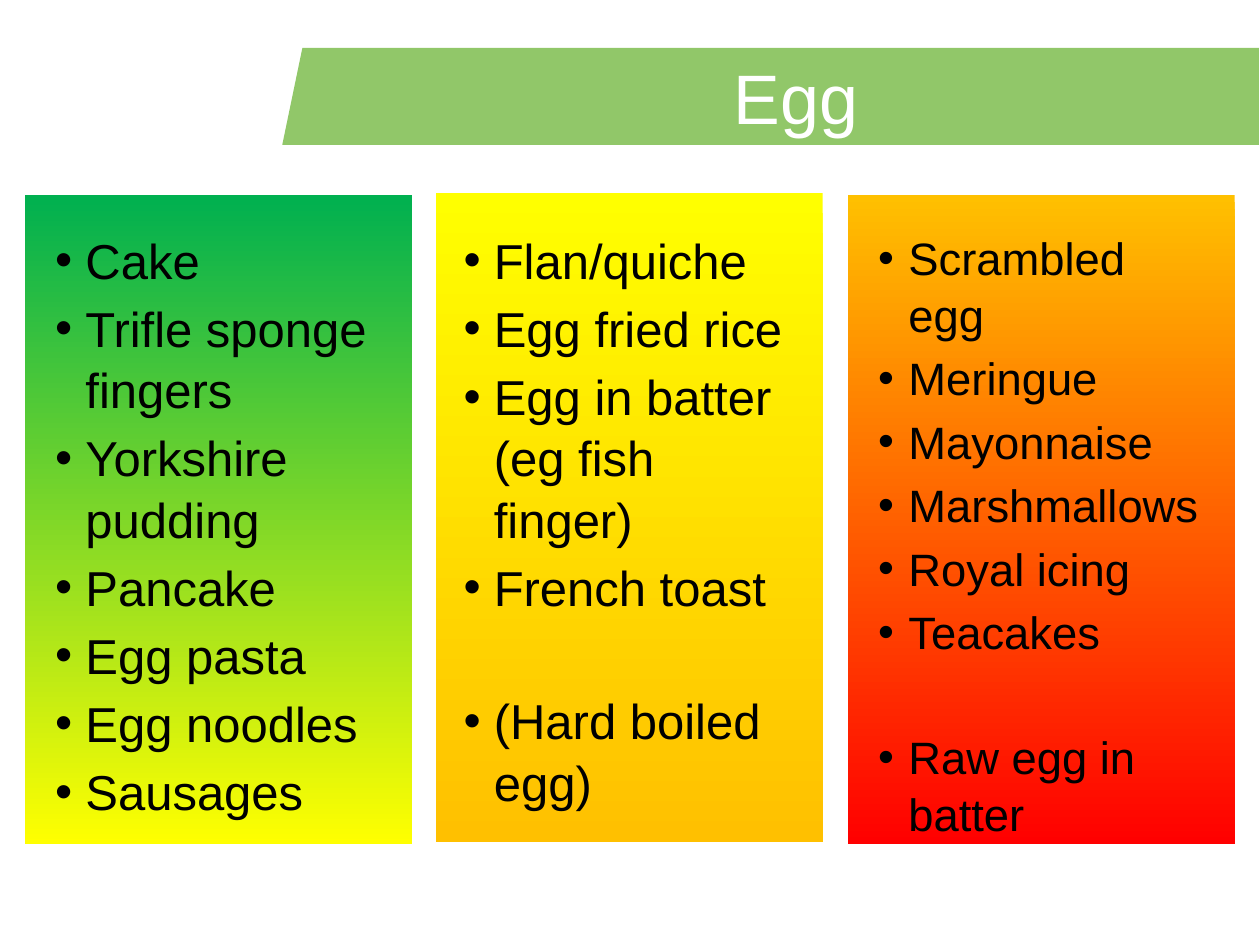
from pptx import Presentation
from pptx.dml.color import RGBColor
from pptx.enum.shapes import MSO_SHAPE
from pptx.enum.text import MSO_ANCHOR, PP_ALIGN
from pptx.oxml.ns import qn
from pptx.util import Inches, Pt
from lxml import etree

RECT = MSO_SHAPE.RECTANGLE
MIDDLE = MSO_ANCHOR.MIDDLE
CENTER = PP_ALIGN.CENTER
FONT = "Arial"
INDENT = Inches(0.24)
GAP = 4
LEADING = 1.04

COLUMNS = [
    (0.2, 1.55, ("00B050", "FFFF00"), 0.34, 0.1, 28,
     [["Cake", "Trifle sponge fingers", "Yorkshire pudding", "Pancake",
       "Egg pasta", "Egg noodles", "Sausages"]]),
    (3.46, 1.53, ("FFFF00", "FFC000"), 3.63, 0.05, 28,
     [["Flan/quiche", "Egg fried rice", "Egg in batter (eg fish finger)",
       "French toast"], ["(Hard boiled egg)"]]),
    (6.73, 1.55, ("FFC000", "FF0000"), 6.92, 0.05, 25.9,
     [["Scrambled egg", "Meringue", "Mayonnaise", "Marshmallows",
       "Royal icing", "Teacakes"], ["Raw egg in batter"]]),
]


def color(code):
    """Turn a hex string into a colour."""
    return RGBColor.from_string(code)


def style(font, size, code):
    """Set the typeface, size and colour of a font."""
    font.name = FONT
    font.size = Pt(size)
    font.color.rgb = color(code)


def add_banner(slide):
    """Draw the slanted band behind the title."""
    pen = slide.shapes.build_freeform(Inches(9.99), Inches(0.38))
    points = [(2.4, 0.38), (2.24, 1.15), (9.99, 1.15)]
    pen.add_line_segments([(Inches(x), Inches(y)) for x, y in points], close=True)
    band = pen.convert_to_shape()
    band.shadow.inherit = False
    band.fill.solid()
    band.fill.fore_color.rgb = color("91C769")
    band.line.fill.background()


def add_panel(slide, left, top, shades):
    """Draw a panel that fades downwards from one shade to the other."""
    panel = slide.shapes.add_shape(
        RECT, Inches(left), Inches(top), Inches(3.07), Inches(5.15))
    panel.shadow.inherit = False
    panel.line.fill.background()
    panel.fill.gradient()
    panel.fill.gradient_angle = 270
    for stop, place, shade in zip(panel.fill.gradient_stops, (0, 1), shades):
        stop.position = place
        stop.color.rgb = color(shade)


def add_box(slide, left, top, width, height):
    """Add a wrapping text box and return its frame."""
    box = slide.shapes.add_textbox(
        Inches(left), Inches(top), Inches(width), Inches(height))
    box.text_frame.word_wrap = True
    return box.text_frame


def add_title(slide, text):
    """Write the centred title on the band."""
    frame = add_box(slide, 2.64, 0.36, 7.35, 0.81)
    frame.vertical_anchor = MIDDLE
    frame.text = text
    para = frame.paragraphs[0]
    para.alignment = CENTER
    style(para.runs[0].font, 40, "FFFFFF")


def add_bullet(para):
    """Give a paragraph a hanging round bullet."""
    props = para._p.get_or_add_pPr()
    props.set("marL", str(INDENT))
    props.set("indent", str(-INDENT))
    etree.SubElement(props, qn("a:buFont")).set("typeface", FONT)
    etree.SubElement(props, qn("a:buChar")).set("char", "•")


def add_list(slide, left, inset, size, groups):
    """Write bulleted groups, one line apart from each other."""
    frame = add_box(slide, left, 1.74, 2.7, 4.95)
    frame.margin_left = frame.margin_right = Inches(inset)
    frame.margin_top = Inches(0.07)
    skip = 2 * GAP + size * 1.15 * LEADING
    items = [(text, GAP if spot else skip)
             for group in groups for spot, text in enumerate(group)]
    frame.text = "\n".join(text for text, _ in items)
    for spot, (para, (_, space)) in enumerate(zip(frame.paragraphs, items)):
        add_bullet(para)
        para.line_spacing = LEADING
        para.space_before = Pt(space if spot else 0)
        style(para.runs[0].font, size, "000000")


def main():
    """Build the slide and save it."""
    deck = Presentation()
    deck.slide_width, deck.slide_height = Inches(10), Inches(7.5)
    slide = deck.slides.add_slide(deck.slide_layouts[6])
    add_banner(slide)
    for left, top, shades, *_ in COLUMNS:
        add_panel(slide, left, top, shades)
    add_title(slide, "Egg")
    for *_, left, inset, size, groups in COLUMNS:
        add_list(slide, left, inset, size, groups)
    deck.save("out.pptx")


if __name__ == "__main__":
    main()
